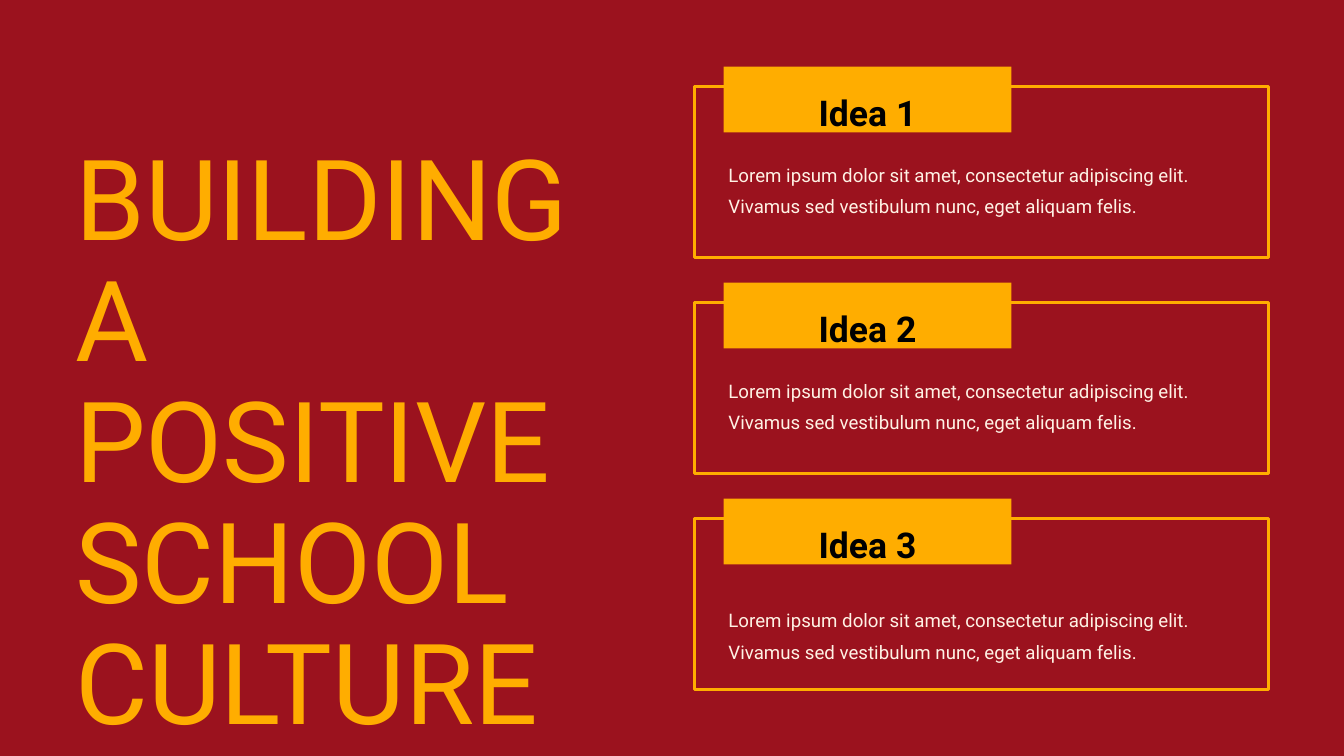
from pptx import Presentation
from pptx.dml.color import RGBColor
from pptx.enum.shapes import MSO_SHAPE
from pptx.enum.text import MSO_ANCHOR, MSO_AUTO_SIZE, PP_ALIGN
from pptx.util import Inches, Pt

RECTANGLE = MSO_SHAPE.RECTANGLE
TOP = MSO_ANCHOR.TOP
NO_AUTOFIT = MSO_AUTO_SIZE.NONE
LEFT, CENTER, JUSTIFY = PP_ALIGN.LEFT, PP_ALIGN.CENTER, PP_ALIGN.JUSTIFY

COLORS = {"background": "9B121E", "gold": "FFAD00", "black": "000000", "cream": "FFF2E5"}
FONT = "Roboto"

TITLE = ["BUILDING A", "POSITIVE", "SCHOOL", "CULTURE"]
LOREM = ("Lorem ipsum dolor sit amet, consectetur adipiscing elit. "
         "Vivamus sed vestibulum nunc, eget aliquam felis.")
IDEAS = [
    {"heading": "Idea 1", "body": LOREM, "body_offset": 1.01},
    {"heading": "Idea 2", "body": LOREM, "body_offset": 1.01},
    {"heading": "Idea 3", "body": LOREM, "body_offset": 1.21},
]

CARD_LEFT, CARD_TOP, CARD_WIDTH, CARD_HEIGHT = 10.34, 1.29, 8.54, 2.54
CARD_PITCH = 3.215
TAB_RISE = 0.3


def color(name):
    return RGBColor.from_string(COLORS[name])


def write_text(shape, lines, size, ink, align=LEFT, spacing=1.4, bold=False):
    frame = shape.text_frame
    frame.auto_size = NO_AUTOFIT
    frame.word_wrap = True
    frame.vertical_anchor = TOP
    frame.margin_left = frame.margin_right = frame.margin_top = frame.margin_bottom = 0
    frame.text = "\n".join(lines)
    for paragraph in frame.paragraphs:
        paragraph.alignment = align
        paragraph.line_spacing = spacing
        font = paragraph.runs[0].font
        font.name, font.size, font.bold = FONT, Pt(size), bold
        font.color.rgb = color(ink)


def add_text(slide, box, text, **text_format):
    shape = slide.shapes.add_textbox(*map(Inches, box))
    write_text(shape, [text], **text_format)


def add_rectangle(slide, box, fill=None, line=None):
    shape = slide.shapes.add_shape(RECTANGLE, *map(Inches, box))
    shape.shadow.inherit = False
    if fill:
        shape.fill.solid()
        shape.fill.fore_color.rgb = color(fill)
    else:
        shape.fill.background()
    if line:
        shape.line.color.rgb = color(line)
        shape.line.width = Pt(3)
    else:
        shape.line.fill.background()


def add_idea(slide, idea, top):
    add_rectangle(slide, (CARD_LEFT, top, CARD_WIDTH, CARD_HEIGHT), line="gold")
    add_rectangle(slide, (CARD_LEFT + 0.43, top - TAB_RISE, 4.28, 0.98), fill="gold")
    add_text(slide, (CARD_LEFT + 0.55, top - 0.19, 4.04, 0.71), idea["heading"],
             size=38, ink="black", align=CENTER, bold=True)
    add_text(slide, (CARD_LEFT + 0.5, top + idea["body_offset"], 7.5, 0.76), idea["body"],
             size=20, ink="cream")


def main():
    presentation = Presentation()
    presentation.slide_width, presentation.slide_height = Inches(20), Inches(11.25)
    slide = presentation.slides.add_slide(presentation.slide_layouts[5])
    slide.background.fill.solid()
    slide.background.fill.fore_color.rgb = color("background")

    title = slide.shapes.title
    title.left, title.top, title.width, title.height = map(Inches, (1.12, 2.14, 8.53, 7.27))
    write_text(title, TITLE, size=120, ink="gold", align=JUSTIFY, spacing=0.9)

    for index, idea in enumerate(IDEAS):
        add_idea(slide, idea, CARD_TOP + index * CARD_PITCH)

    presentation.save("out.pptx")


if __name__ == "__main__":
    main()
